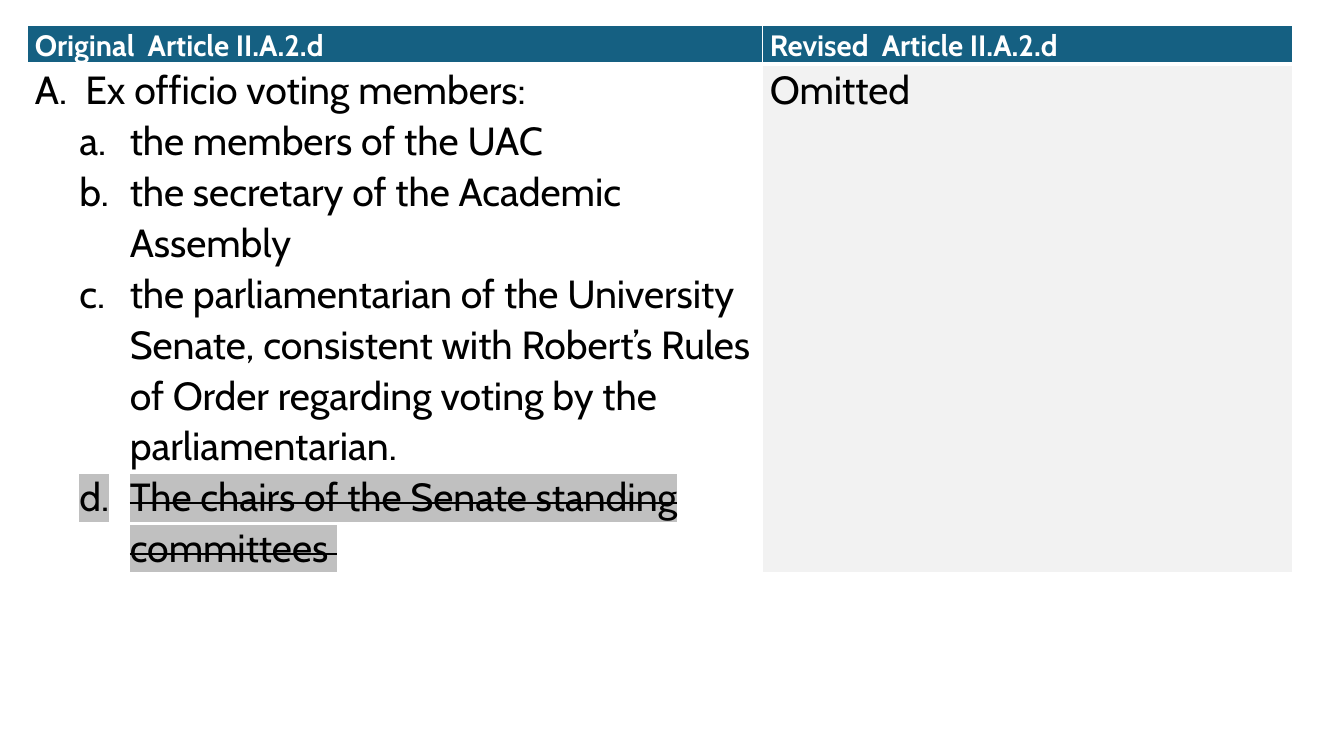
from dataclasses import dataclass
from typing import Optional

from lxml.etree import SubElement
from pptx import Presentation
from pptx.dml.color import RGBColor
from pptx.oxml import parse_xml
from pptx.oxml.ns import nsdecls, qn
from pptx.util import Cm, Pt

FONT = "Cabin"
WHITE, BLACK = "FFFFFF", "000000"
HEADER_BLUE, PALE_GREY, MARK_GREY = "156082", "F2F2F2", "C0C0C0"


@dataclass
class Line:
    text: str
    numbering: Optional[str] = None
    left: float = 0
    struck: bool = False


@dataclass
class CellContent:
    lines: list[Line]
    fill: Optional[str]
    size: float
    color: str
    bold: bool
    top_border: float
    bottom_border: float


def hex_color(value: str) -> RGBColor:
    return RGBColor.from_string(value)


def header(text: str) -> CellContent:
    return CellContent([Line(text)], HEADER_BLUE, 21, WHITE, True, 1, 3)


def body(lines: list[Line], fill: Optional[str]) -> CellContent:
    return CellContent(lines, fill, 28, BLACK, False, 3, 1)


def member(text: str, struck: bool = False) -> Line:
    return Line(text, "alphaLcPeriod", 2.39, struck)


def number_paragraph(para, line: Line) -> None:
    properties = para._p.get_or_add_pPr()
    properties.set("marL", str(Cm(line.left)))
    properties.set("indent", str(Cm(-1.27)))
    SubElement(properties, qn("a:buFont"), typeface="+mj-lt")
    SubElement(properties, qn("a:buAutoNum"), type=line.numbering)


def strike_and_mark(span) -> None:
    properties = span._r.get_or_add_rPr()
    properties.set("strike", "sngStrike")
    highlight = parse_xml(
        f'<a:highlight {nsdecls("a")}><a:srgbClr val="{MARK_GREY}"/></a:highlight>')
    properties.find(qn("a:solidFill")).addnext(highlight)


def set_borders(cell, top: float, bottom: float) -> None:
    properties = cell._tc.get_or_add_tcPr()
    widths = {"lnL": 1, "lnR": 1, "lnT": top, "lnB": bottom}
    for position, (side, width) in enumerate(widths.items()):
        properties.insert(position, parse_xml(
            f'<a:{side} {nsdecls("a")} w="{Pt(width)}"><a:solidFill>'
            f'<a:srgbClr val="{WHITE}"/></a:solidFill></a:{side}>'))


def fill_cell(cell, content: CellContent) -> None:
    cell.margin_left = cell.margin_right = Cm(0.18)
    cell.margin_top = cell.margin_bottom = 0
    if content.fill:
        cell.fill.solid()
        cell.fill.fore_color.rgb = hex_color(content.fill)
    else:
        cell.fill.background()
    set_borders(cell, content.top_border, content.bottom_border)

    frame = cell.text_frame
    frame.text = "\n".join(line.text for line in content.lines)
    for para, line in zip(frame.paragraphs, content.lines):
        para.line_spacing = 1.07
        if line.numbering:
            number_paragraph(para, line)
        for span in para.runs:
            span.font.name = FONT
            span.font.size = Pt(content.size)
            span.font.bold = content.bold
            span.font.color.rgb = hex_color(content.color)
            if line.struck:
                strike_and_mark(span)


ROWS = [
    [header("Original  Article II.A.2.d"), header("Revised  Article II.A.2.d")],
    [
        body([
            Line("Ex officio voting members:", "alphaUcPeriod", 1.27),
            member("the members of the UAC"),
            member("the secretary of the Academic Assembly"),
            member("the parliamentarian of the University Senate, consistent with "
                   "Robert’s Rules of Order regarding voting by the parliamentarian."),
            member("The chairs of the Senate standing committees ", struck=True),
        ], None),
        body([Line("Omitted")], PALE_GREY),
    ],
]
COLUMN_WIDTHS = [18.52, 13.36]
ROW_HEIGHTS = [0.96, 12.6]


def main() -> None:
    deck = Presentation()
    deck.slide_width, deck.slide_height = Cm(33.87), Cm(19.05)
    page = deck.slides.add_slide(deck.slide_layouts[6])

    # Comparison table
    table = page.shapes.add_table(
        len(ROWS), len(COLUMN_WIDTHS), Cm(0.7), Cm(0.64),
        Cm(sum(COLUMN_WIDTHS)), Cm(sum(ROW_HEIGHTS))).table
    table.first_row = table.horz_banding = False
    for column, width in zip(table.columns, COLUMN_WIDTHS):
        column.width = Cm(width)
    for row, height, contents in zip(table.rows, ROW_HEIGHTS, ROWS):
        row.height = Cm(height)
        for cell, content in zip(row.cells, contents):
            fill_cell(cell, content)

    deck.save("out.pptx")


if __name__ == "__main__":
    main()
